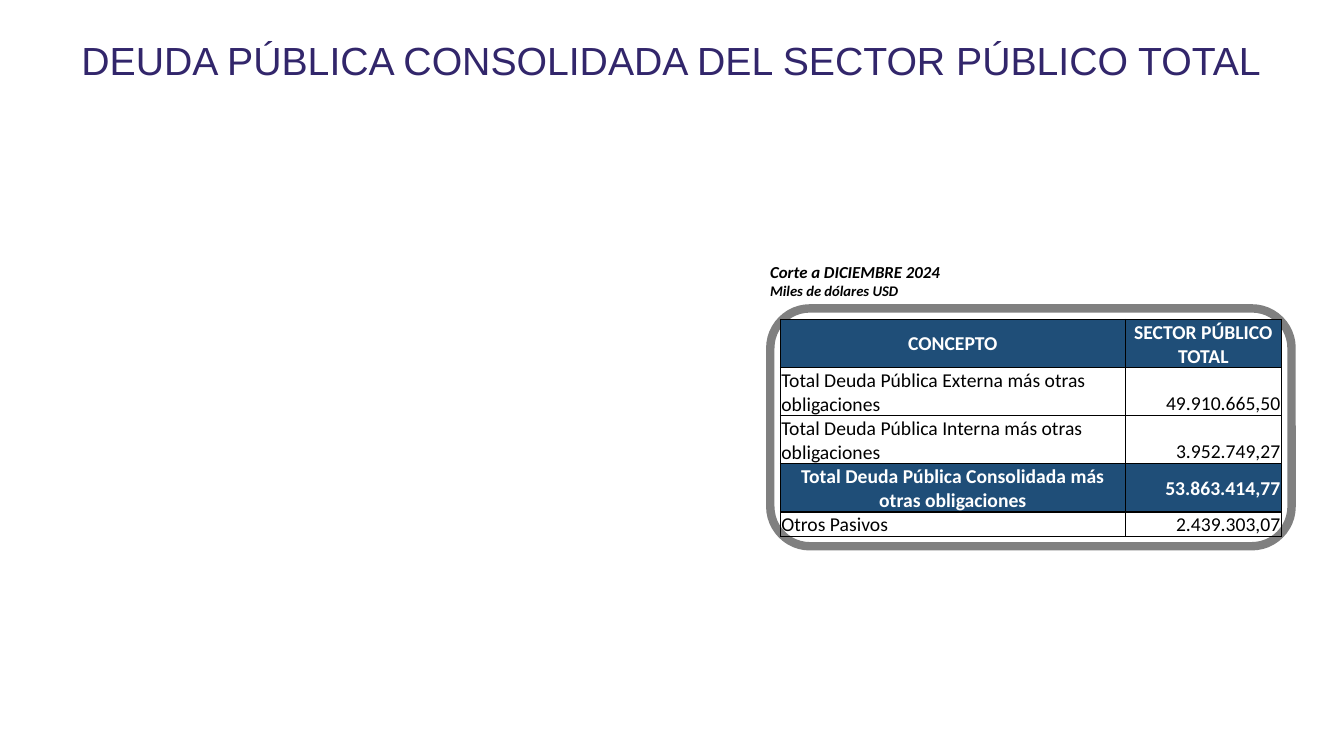
from lxml import etree
from pptx import Presentation
from pptx import util as u
from pptx.dml.color import RGBColor
from pptx.enum import shapes, text
from pptx.oxml import ns

NAVY, BLACK, WHITE, GRAY, PURPLE = "1F4E78", "000000", "FFFFFF", "808080", "32266B"
LEFT, CENTER, RIGHT = text.PP_ALIGN.LEFT, text.PP_ALIGN.CENTER, text.PP_ALIGN.RIGHT
COLUMN_WIDTHS = (3.42, 1.55)
ROW_HEIGHTS = (0.43, 0.43, 0.43, 0.43, 0.22)
DEBT_ROWS = (
    ("CONCEPTO", "SECTOR PÚBLICO TOTAL"),
    ("Total Deuda Pública Externa más otras obligaciones", "49.910.665,50"),
    ("Total Deuda Pública Interna más otras obligaciones", "3.952.749,27"),
    ("Total Deuda Pública Consolidada más otras obligaciones", "53.863.414,77"),
    ("Otros Pasivos", "2.439.303,07"),
)
HEADER_ROW, TOTAL_ROW = 0, 3


def color(value):
    """Return the colour for a hex string."""
    return RGBColor.from_string(value)


def format_paragraph(paragraph, size, hex_color, name="Calibri", bold=False, italic=False):
    """Format every run of a paragraph."""
    for run in paragraph.runs:
        font = run.font
        font.name, font.size = name, u.Pt(size)
        font.bold, font.italic = bold, italic
        font.color.rgb = color(hex_color)


def add_text_box(slide, box, content):
    """Add a wrapped, vertically centred text box and return its paragraphs."""
    frame = slide.shapes.add_textbox(*map(u.Inches, box)).text_frame
    frame.word_wrap = True
    frame.vertical_anchor = text.MSO_ANCHOR.MIDDLE
    frame.text = content
    return frame.paragraphs


def add_title(slide, box):
    """Add the slide title."""
    title = add_text_box(slide, box, "DEUDA PÚBLICA CONSOLIDADA DEL SECTOR PÚBLICO TOTAL")[0]
    title.line_spacing = 0.9
    format_paragraph(title, 28, PURPLE, "Arial")


def add_caption(slide, box):
    """Add the cut-off date and the unit above the table."""
    paragraphs = add_text_box(slide, box, "Corte a DICIEMBRE 2024\nMiles de dólares USD")
    for paragraph, size in zip(paragraphs, (12, 10.5)):
        format_paragraph(paragraph, size, BLACK, bold=True, italic=True)


def add_frame(slide, box):
    """Add the thick rounded outline around the table."""
    frame = slide.shapes.add_shape(
        shapes.MSO_SHAPE.ROUNDED_RECTANGLE, *map(u.Inches, box))
    frame.shadow.inherit = False
    frame.fill.background()
    frame.line.color.rgb = color(GRAY)
    frame.line.width = u.Pt(6)


def add_borders(cell):
    """Draw a thin black line on each side of a cell."""
    properties = cell._tc.get_or_add_tcPr()
    for position, side in enumerate(("a:lnL", "a:lnR", "a:lnT", "a:lnB")):
        line = etree.Element(ns.qn(side), w=str(u.Pt(1)))
        fill = etree.SubElement(line, ns.qn("a:solidFill"))
        etree.SubElement(fill, ns.qn("a:srgbClr"), val=BLACK)
        properties.insert(position, line)


def fill_cell(cell, content, row, column):
    """Write and style one cell according to its row and column."""
    highlighted = row in (HEADER_ROW, TOTAL_ROW)
    cell.text = content
    cell.margin_left = cell.margin_right = cell.margin_top = u.Inches(0.01)
    cell.margin_bottom = 0
    cell.vertical_anchor = text.MSO_ANCHOR.MIDDLE if highlighted else text.MSO_ANCHOR.BOTTOM
    if highlighted:
        cell.fill.solid()
        cell.fill.fore_color.rgb = color(NAVY)
    else:
        cell.fill.background()
    add_borders(cell)
    paragraph = cell.text_frame.paragraphs[0]
    if row == HEADER_ROW:
        paragraph.alignment = CENTER
    elif column == 1:
        paragraph.alignment = RIGHT
    else:
        paragraph.alignment = CENTER if highlighted else LEFT
    format_paragraph(paragraph, 14, WHITE if highlighted else BLACK, bold=highlighted)


def add_debt_table(slide, left, top):
    """Add the consolidated debt table."""
    table = slide.shapes.add_table(
        len(ROW_HEIGHTS), len(COLUMN_WIDTHS), u.Inches(left), u.Inches(top),
        u.Inches(sum(COLUMN_WIDTHS)), u.Inches(sum(ROW_HEIGHTS))).table
    table.first_row = table.horz_banding = False
    for column, width in zip(table.columns, COLUMN_WIDTHS):
        column.width = u.Inches(width)
    for row, height in zip(table.rows, ROW_HEIGHTS):
        row.height = u.Inches(height)
    for row, values in enumerate(DEBT_ROWS):
        for column, value in enumerate(values):
            fill_cell(table.cell(row, column), value, row, column)


def add_debt_panel(slide, left, top):
    """Add the caption, the outline and the table from a top-left corner."""
    add_caption(slide, (left, top, 4.38, 0.36))
    add_frame(slide, (left + 0.1, top + 0.46, 5.17, 2.36))
    add_debt_table(slide, left + 0.2, top + 0.57)


def main():
    """Build and save the presentation."""
    presentation = Presentation()
    presentation.slide_width, presentation.slide_height = u.Inches(13.33), u.Inches(7.5)
    slide = presentation.slides.add_slide(presentation.slide_layouts[6])
    add_title(slide, (0.71, 0.14, 12.3, 0.96))
    add_debt_panel(slide, 7.54, 2.6)
    presentation.save("out.pptx")


if __name__ == "__main__":
    main()
